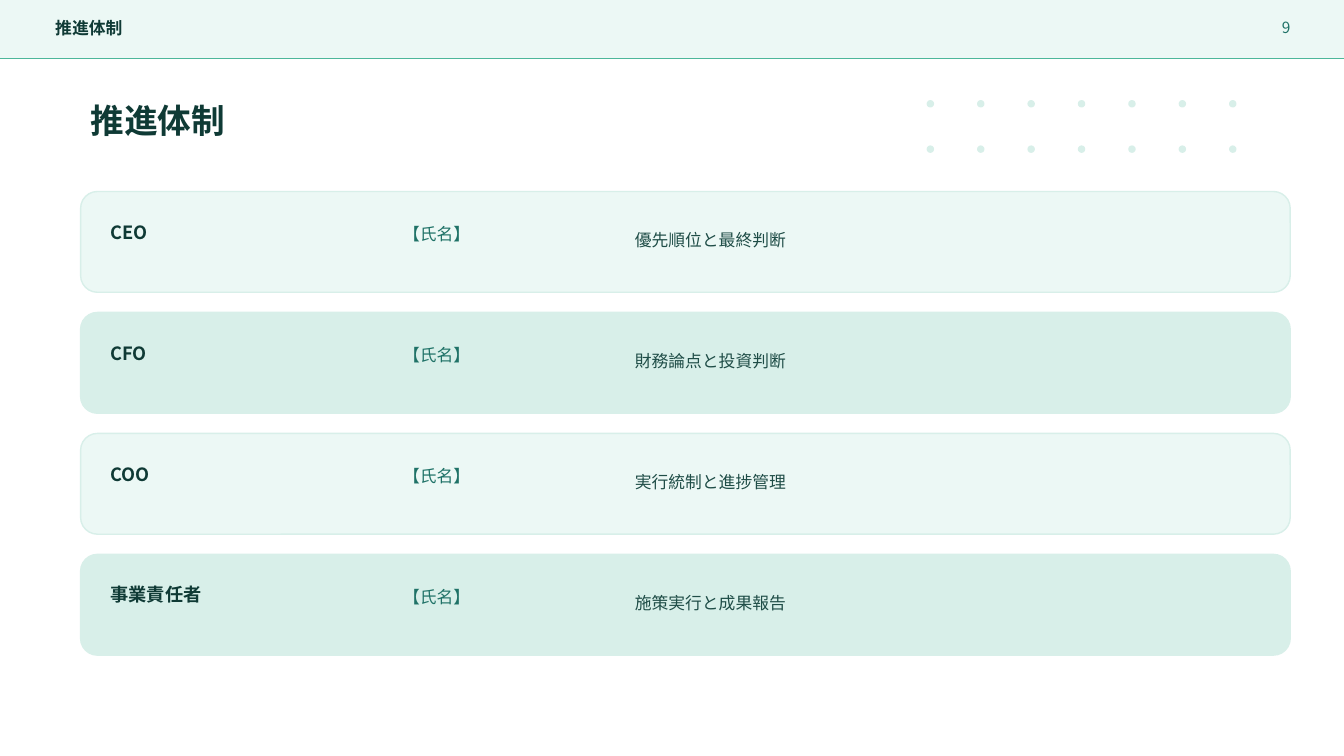
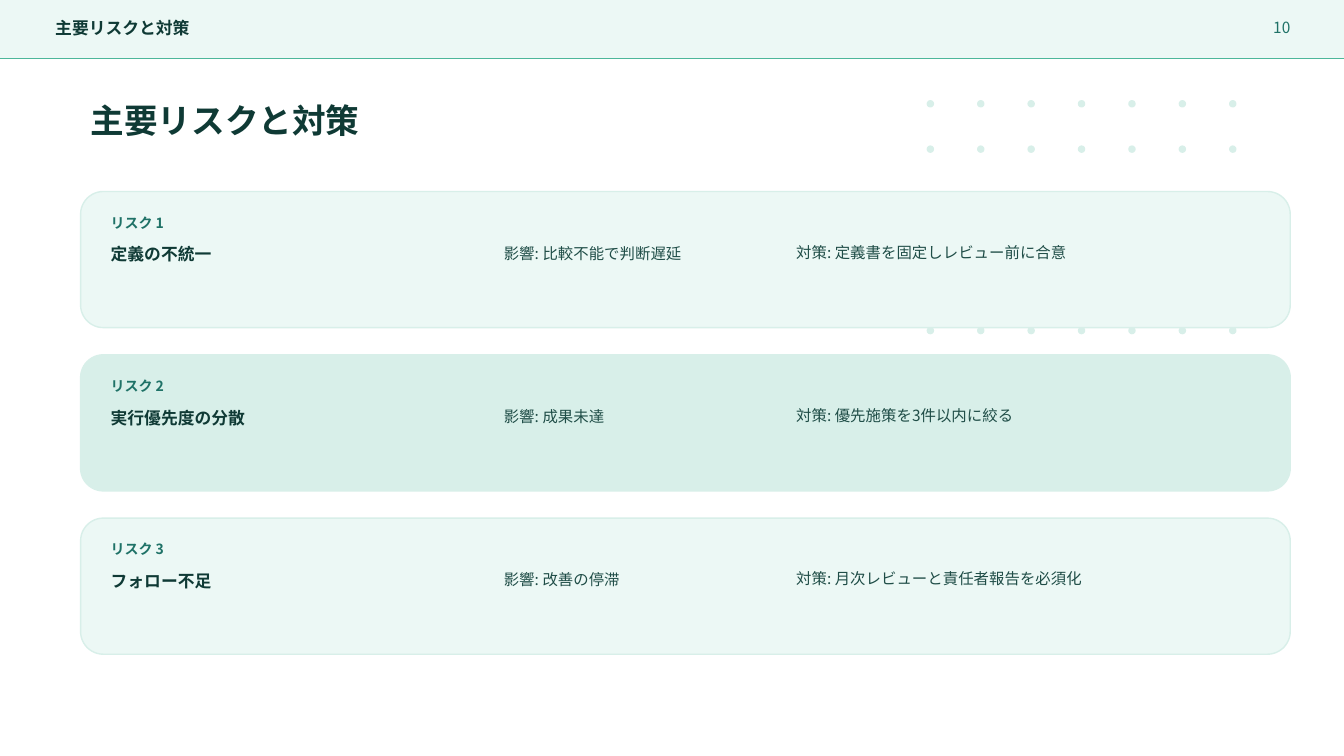
from lxml import etree
from pptx import Presentation
from pptx import util as u
from pptx.dml.color import RGBColor
from pptx.enum import shapes, text
from pptx.oxml.ns import qn

CELL = 0.1
COLS, ROWS = 133.33, 75
BODY, HEAD = "Noto Sans CJK JP", "Cabin"
DARK, GREEN, INK = "0F3A35", "1F7267", "1F4D47"
PALE, MINT, RULE = "ECF8F5", "D8EFE9", "4DB79A"
CARD_LEFT, CARD_TOP, CARD_WIDTH = 8, 19, 120

ROLES = [
    ("CEO", "【氏名】", "優先順位と最終判断"),
    ("CFO", "【氏名】", "財務論点と投資判断"),
    ("COO", "【氏名】", "実行統制と進捗管理"),
    ("事業責任者", "【氏名】", "施策実行と成果報告"),
]
ROLE_FIELDS = [
    ((10, 2.8, 27, 2.4), dict(size=13, color=DARK, bold=True)),
    ((39, 3, 21, 2.4), dict(size=12, color=GREEN)),
    ((62, 2.5, 62, 4.5), dict(size=12, color=INK)),
]
RISKS = [
    ("リスク 1", "定義の不統一", "影響: 比較不能で判断遅延",
     "対策: 定義書を固定しレビュー前に合意"),
    ("リスク 2", "実行優先度の分散", "影響: 成果未達",
     "対策: 優先施策を3件以内に絞る"),
    ("リスク 3", "フォロー不足", "影響: 改善の停滞",
     "対策: 月次レビューと責任者報告を必須化"),
]
RISK_FIELDS = [
    ((10, 2, 12, 2.2), dict(size=10, color=GREEN, bold=True)),
    ((10, 4.6, 37, 3.2), dict(size=12, color=DARK, bold=True)),
    ((49, 4.6, 28, 3), dict(size=11, color=INK)),
    ((78, 4.6, 48, 5.8), dict(size=11, color=INK, anchor=text.MSO_ANCHOR.TOP)),
]


def cells(*counts):
    """Turn counts of grid cells into lengths."""
    return [u.Inches(n * CELL) for n in counts]


def rgb(value):
    """Turn a hex string into a colour."""
    return RGBColor.from_string(value)


def write(sp, content, size=12, color=INK, bold=False, font=BODY,
          align=text.PP_ALIGN.LEFT, anchor=text.MSO_ANCHOR.MIDDLE):
    """Put one formatted line of text into a shape."""
    tf = sp.text_frame
    tf.word_wrap = True
    tf.auto_size = text.MSO_AUTO_SIZE.NONE
    tf.vertical_anchor = anchor
    p = tf.paragraphs[0]
    p.alignment = align
    r = p.add_run()
    r.text = content
    r.font.size = u.Pt(size)
    r.font.bold = bold
    r.font.name = font
    r.font.color.rgb = rgb(color)
    latin = r.font._element.find(qn("a:latin"))
    east = etree.Element(qn("a:ea"), typeface=font)
    latin.addnext(east)


def add_text(s, box, content, **style):
    """Add a text box on the grid."""
    write(s.shapes.add_textbox(*cells(*box)), content, **style)


def add_shape(s, kind, box, fill, line):
    """Add a flat filled shape on the grid."""
    sp = s.shapes.add_shape(kind, *cells(*box))
    sp.shadow.inherit = False
    sp.fill.solid()
    sp.fill.fore_color.rgb = rgb(fill)
    sp.line.color.rgb = rgb(line)
    sp.line.width = u.Pt(1)


def add_rule(s, row):
    """Draw a line across the slide."""
    sp = s.shapes.add_connector(shapes.MSO_CONNECTOR.STRAIGHT,
                                *cells(0, row, COLS, row))
    sp.line.color.rgb = rgb(RULE)
    sp.line.width = u.Pt(1)
    etree.SubElement(sp._element.spPr, qn("a:effectLst"))


def add_dots(s, rows):
    """Draw the decorative rows of seven dots."""
    for row in rows:
        for i in range(7):
            add_shape(s, shapes.MSO_SHAPE.OVAL, (92 + 5 * i, row, 0.6, 0.6),
                      MINT, MINT)


def add_page(prs, title, number, dot_rows):
    """Add a slide with its dots, header band and title."""
    s = prs.slides.add_slide(prs.slide_layouts[5])
    sp = s.shapes.title
    sp.left, sp.top, sp.width, sp.height = cells(8, 9.5, 114, 4.8)
    write(sp, title, size=24, color=DARK, bold=True, font=HEAD)
    add_dots(s, dot_rows)
    add_shape(s, shapes.MSO_SHAPE.RECTANGLE, (0, 0, COLS, 5.8), PALE, PALE)
    add_rule(s, 5.8)
    add_text(s, (4.5, 1.5, 93, 2.6), title, color=DARK, bold=True)
    add_text(s, (122, 1.4, 7, 2.6), str(number), size=11, color=GREEN,
             align=text.PP_ALIGN.RIGHT)
    return s


def add_cards(s, records, fields, height, gap):
    """Stack cards of alternating fill, one for each record."""
    for i, record in enumerate(records):
        top = CARD_TOP + i * (height + gap)
        add_shape(s, shapes.MSO_SHAPE.ROUNDED_RECTANGLE,
                  (CARD_LEFT, top, CARD_WIDTH, height), (PALE, MINT)[i % 2], MINT)
        for content, ((left, down, wide, high), style) in zip(record, fields):
            add_text(s, (left, top + down, wide, high), content, **style)


def main():
    """Build and save the presentation."""
    prs = Presentation()
    prs.slide_width, prs.slide_height = cells(COLS, ROWS)
    s = add_page(prs, "推進体制", 9, (10, 14.5))
    add_cards(s, ROLES, ROLE_FIELDS, height=10, gap=2)
    s = add_page(prs, "主要リスクと対策", 10, (10, 14.5, 32.5))
    add_cards(s, RISKS, RISK_FIELDS, height=13.5, gap=2.7)
    prs.save("out.pptx")


if __name__ == "__main__":
    main()
